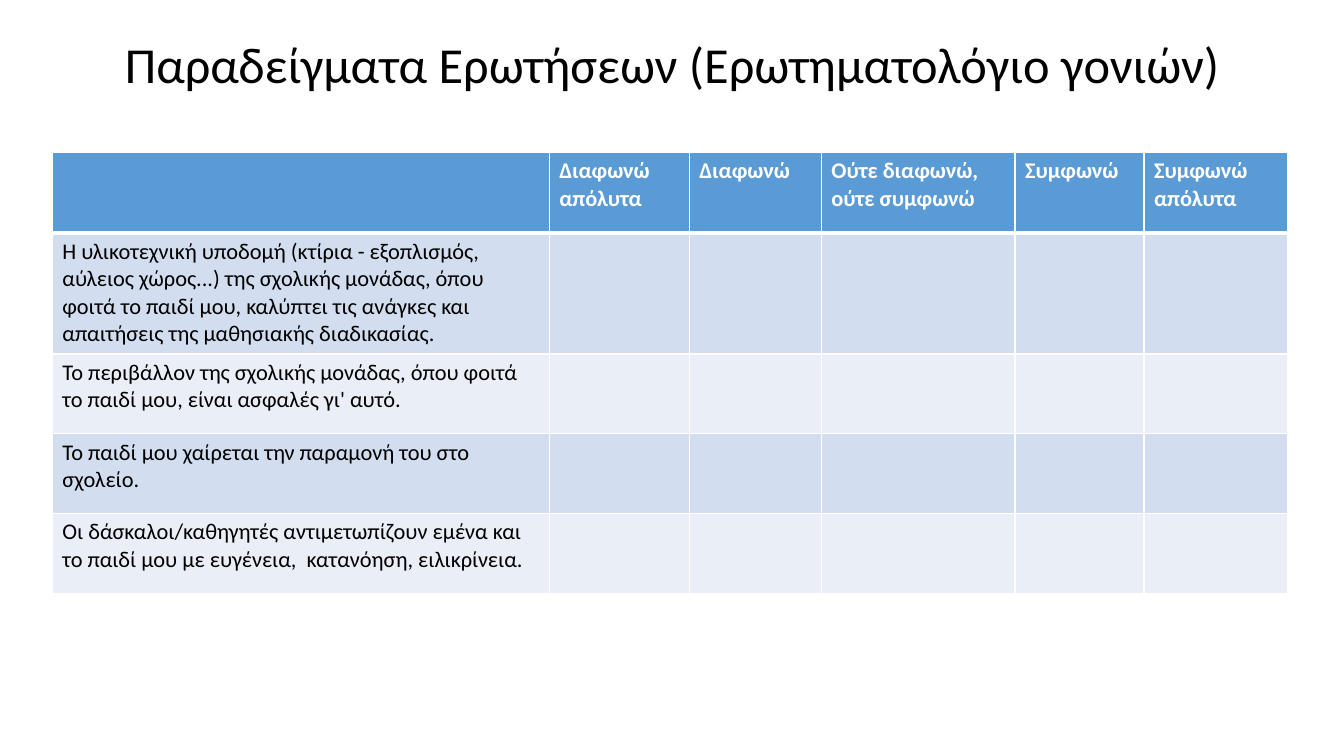
from dataclasses import dataclass

from lxml import etree
from pptx import Presentation
from pptx.dml.color import RGBColor
from pptx.enum import text
from pptx.oxml import ns
from pptx.util import Cm, Pt

TITLE = "Παραδείγματα Ερωτήσεων (Ερωτηματολόγιο γονιών)"
ANSWERS = [
    "Διαφωνώ απόλυτα",
    "Διαφωνώ",
    "Ούτε διαφωνώ, ούτε συμφωνώ",
    "Συμφωνώ",
    "Συμφωνώ απόλυτα",
]
QUESTIONS = [
    "Η υλικοτεχνική υποδομή (κτίρια - εξοπλισμός, αύλειος χώρος...) της σχολικής "
    "μονάδας, όπου φοιτά το παιδί μου, καλύπτει τις ανάγκες και απαιτήσεις της "
    "μαθησιακής διαδικασίας.",
    "Το περιβάλλον της σχολικής μονάδας, όπου φοιτά το παιδί μου, είναι ασφαλές γι' αυτό.",
    "Το παιδί μου χαίρεται την παραμονή του στο σχολείο.",
    "Οι δάσκαλοι/καθηγητές αντιμετωπίζουν εμένα και το παιδί μου με ευγένεια,  "
    "κατανόηση, ειλικρίνεια.",
]
COLUMN_WIDTHS = [12.52, 3.53, 3.33, 4.88, 3.25, 3.63]
ROW_HEIGHTS = [2.03, 3.05, 2.01, 2.01, 2.01]


@dataclass(frozen=True)
class Theme:
    font: str = "Calibri"
    title_size: int = 36
    table_size: int = 16
    ink: str = "000000"
    paper: str = "FFFFFF"
    header: str = "5B9BD5"
    bands: tuple = ("D2DEEF", "EAEFF7")
    thin: int = 1
    thick: int = 3


THEME = Theme()


def style_runs(frame, size, color, bold=False):
    for paragraph in frame.paragraphs:
        for run in paragraph.runs:
            run.font.name = THEME.font
            run.font.size = Pt(size)
            run.font.bold = bold
            run.font.color.rgb = RGBColor.from_string(color)


def set_borders(cell, top, bottom):
    """Draw all four cell borders; top and bottom are widths in points."""
    properties = cell._tc.get_or_add_tcPr()
    widths = {"L": THEME.thin, "R": THEME.thin, "T": top, "B": bottom}
    for position, (side, width) in enumerate(widths.items()):
        line = etree.Element(ns.qn(f"a:ln{side}"), w=str(Pt(width)))
        fill = etree.SubElement(line, ns.qn("a:solidFill"))
        etree.SubElement(fill, ns.qn("a:srgbClr"), val=THEME.paper)
        properties.insert(position, line)


def add_title(slide):
    frame = slide.shapes.add_textbox(Cm(2.34), Cm(0.79), Cm(29.21), Cm(1.83)).text_frame
    frame.word_wrap = True
    frame.vertical_anchor = text.MSO_ANCHOR.MIDDLE
    frame.text = TITLE
    frame.paragraphs[0].alignment = text.PP_ALIGN.CENTER
    frame.paragraphs[0].line_spacing = 0.9
    style_runs(frame, THEME.title_size, THEME.ink)


def add_questionnaire(slide):
    rows = [["", *ANSWERS]] + [[question] + [""] * len(ANSWERS) for question in QUESTIONS]
    table = slide.shapes.add_table(
        len(rows), len(COLUMN_WIDTHS), Cm(1.32), Cm(3.84),
        Cm(sum(COLUMN_WIDTHS)), Cm(sum(ROW_HEIGHTS)),
    ).table
    for column, width in zip(table.columns, COLUMN_WIDTHS):
        column.width = Cm(width)
    for row, height in zip(table.rows, ROW_HEIGHTS):
        row.height = Cm(height)

    for r, row in enumerate(rows):
        is_header = r == 0
        fill = THEME.header if is_header else THEME.bands[(r - 1) % 2]
        ink = THEME.paper if is_header else THEME.ink
        top = THEME.thick if r == 1 else THEME.thin
        bottom = THEME.thick if is_header else THEME.thin
        for c, wording in enumerate(row):
            cell = table.cell(r, c)
            cell.fill.solid()
            cell.fill.fore_color.rgb = RGBColor.from_string(fill)
            set_borders(cell, top, bottom)
            if wording:
                cell.text_frame.text = wording
                style_runs(cell.text_frame, THEME.table_size, ink, is_header)


def main():
    deck = Presentation()
    deck.slide_width, deck.slide_height = Cm(33.87), Cm(19.05)
    slide = deck.slides.add_slide(deck.slide_layouts[6])
    add_title(slide)
    add_questionnaire(slide)
    deck.save("out.pptx")


if __name__ == "__main__":
    main()
